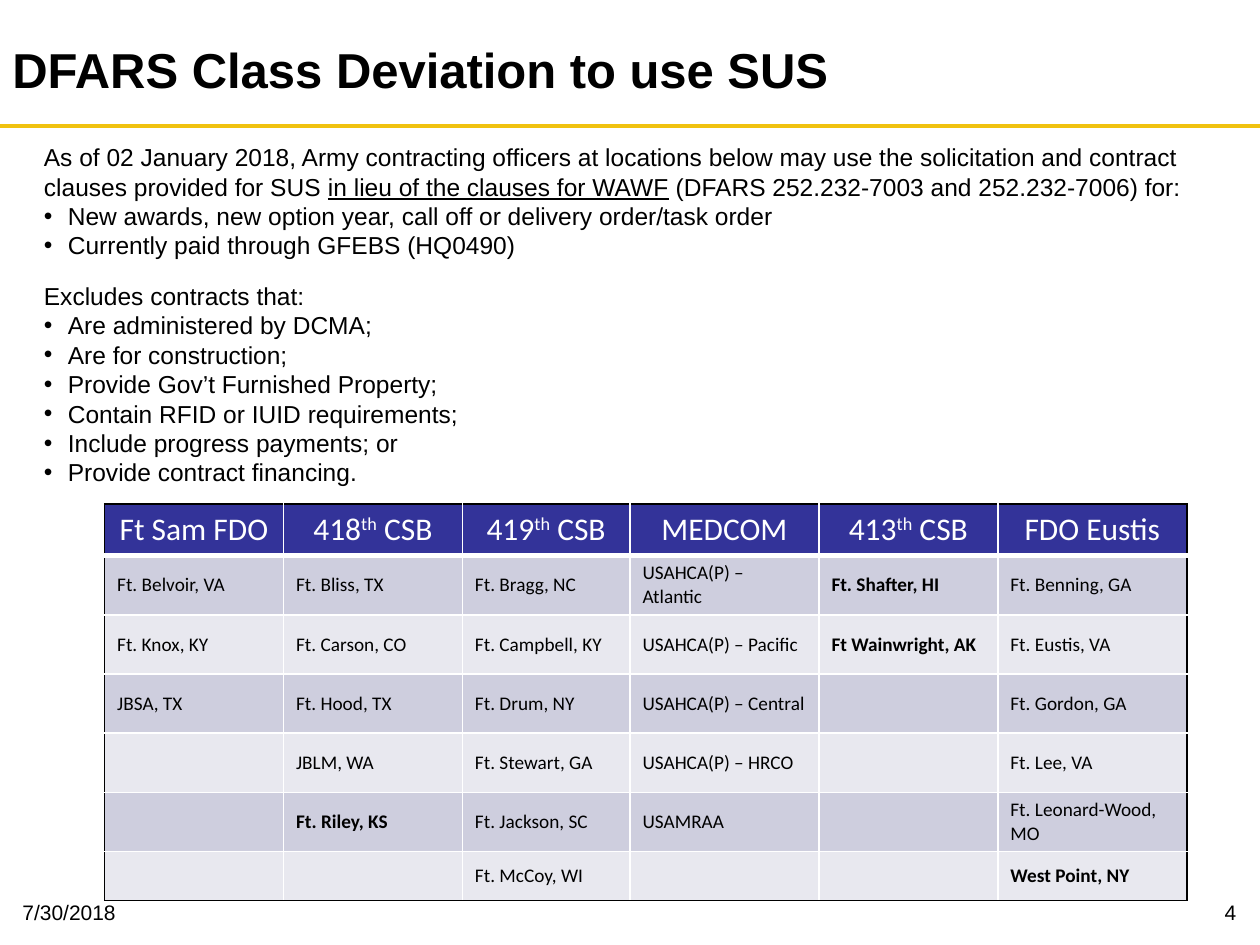
from dataclasses import dataclass

from lxml.etree import SubElement
from pptx import Presentation
from pptx.dml.color import RGBColor
from pptx.enum.shapes import MSO_CONNECTOR
from pptx.enum.text import MSO_ANCHOR, PP_ALIGN
from pptx.oxml.ns import qn
from pptx.util import Inches, Pt


@dataclass(frozen=True)
class Theme:
    ink: str = "000000"
    paper: str = "FFFFFF"
    gold: str = "F0C210"
    navy: str = "333399"
    bands: tuple = ("CECEDE", "E8E8EF")
    sans: str = "Arial"
    grid: str = "Calibri"
    title: float = 28
    head: float = 18
    body: float = 14
    foot: float = 12
    cell: float = 11
    pitch: float = 16.8
    gap: float = 12


INTRO = [
    "As of 02 January 2018, Army contracting officers at locations below may use "
    "the solicitation and contract clauses provided for SUS ^in lieu of the clauses "
    "for WAWF^ (DFARS 252.232-7003 and 252.232-7006) for:",
    "• New awards, new option year, call off or delivery order/task order",
    "• Currently paid through GFEBS (HQ0490)",
    "Excludes contracts that:",
    "• Are administered by DCMA;",
    "• Are for construction;",
    "• Provide Gov’t Furnished Property;",
    "• Contain RFID or IUID requirements;",
    "• Include progress payments; or",
    "• Provide contract financing.",
]
SITES = [
    ["Ft Sam FDO", "418^th^ CSB", "419^th^ CSB", "MEDCOM", "413^th^ CSB", "FDO Eustis"],
    ["Ft. Belvoir, VA", "Ft. Bliss, TX", "Ft. Bragg, NC", "USAHCA(P) – Atlantic",
     "*Ft. Shafter, HI", "Ft. Benning, GA"],
    ["Ft. Knox, KY", "Ft. Carson, CO", "Ft. Campbell, KY", "USAHCA(P) – Pacific",
     "*Ft Wainwright, AK", "Ft. Eustis, VA"],
    ["JBSA, TX", "Ft. Hood, TX", "Ft. Drum, NY", "USAHCA(P) – Central", "",
     "Ft. Gordon, GA"],
    ["", "JBLM, WA", "Ft. Stewart, GA", "USAHCA(P) – HRCO", "", "Ft. Lee, VA"],
    ["", "*Ft. Riley, KS", "Ft. Jackson, SC", "USAMRAA", "", "Ft. Leonard-Wood, MO"],
    ["", "", "Ft. McCoy, WI", "", "", "*West Point, NY"],
]
WIDTHS = [1.42, 1.42, 1.33, 1.5, 1.42, 1.5]
HEIGHTS = [0.41] + [0.47] * 5 + [0.39]


def lift(run):
    run._r.get_or_add_rPr().set("baseline", "30000")


def under(run):
    run.font.underline = True


class Deck:
    """Draws styled elements on the current slide."""

    def __init__(self, theme):
        self.theme = theme
        self.file = Presentation()
        self.file.slide_width, self.file.slide_height = Inches(10), Inches(7.5)
        self.slide = self.file.slides.add_slide(self.file.slide_layouts[6])

    def rule(self, y):
        line = self.slide.shapes.add_connector(
            MSO_CONNECTOR.STRAIGHT, 0, Inches(y), Inches(10), Inches(y))
        line.line.color.rgb = RGBColor.from_string(self.theme.gold)
        line.line.width = Pt(2.5)
        SubElement(line._element.spPr, qn("a:effectLst"))

    def font(self, para, size, name, color, bold=False):
        para.font.size, para.font.name, para.font.bold = Pt(size), name, bold
        para.font.color.rgb = RGBColor.from_string(color)

    def runs(self, para, text, mark):
        for i, part in enumerate(text.split("^")):
            if part:
                run = para.add_run()
                run.text = part
                if i % 2:
                    mark(run)

    def text(self, box, words, size, bold=False, align=PP_ALIGN.LEFT):
        frame = self.slide.shapes.add_textbox(*map(Inches, box)).text_frame
        frame.word_wrap = True
        para = frame.paragraphs[0]
        para.alignment = align
        self.runs(para, words, under)
        self.font(para, size, self.theme.sans, self.theme.ink, bold)
        return frame

    def title(self, words):
        frame = self.text((0, 0.17, 7.33, 0.75), words, self.theme.title, True)
        frame.vertical_anchor = MSO_ANCHOR.MIDDLE

    def footer(self, left, words, align):
        frame = self.text((left, 6.9, 2.33, 0.52), words, self.theme.foot, align=align)
        frame.margin_top = Inches(0.24)

    def body(self, box, lines):
        frame = self.text(box, lines[0], self.theme.body)
        frame.paragraphs[0].line_spacing = Pt(self.theme.pitch)
        for words in lines[1:]:
            para = frame.add_paragraph()
            para.line_spacing = Pt(self.theme.pitch)
            if words.startswith("• "):
                props = para._p.get_or_add_pPr()
                props.set("marL", str(Inches(0.19)))
                props.set("indent", str(-Inches(0.19)))
                SubElement(props, qn("a:buFont")).set("typeface", self.theme.sans)
                SubElement(props, qn("a:buChar")).set("char", "•")
            else:
                para.space_before = Pt(self.theme.gap)
            self.runs(para, words.removeprefix("• "), under)
            self.font(para, self.theme.body, self.theme.sans, self.theme.ink)

    def border(self, cell, side, color, width):
        line = SubElement(cell._tc.get_or_add_tcPr(), qn(f"a:ln{side}"), w=str(Pt(width)))
        fill = SubElement(line, qn("a:solidFill"))
        SubElement(fill, qn("a:srgbClr"), val=color)

    def cell(self, cell, words, head, fill):
        look = self.theme
        cell.margin_top = cell.margin_bottom = Inches(0.05 if head else 0.04)
        cell.vertical_anchor = MSO_ANCHOR.TOP if head else MSO_ANCHOR.MIDDLE
        para = cell.text_frame.paragraphs[0]
        para.alignment = PP_ALIGN.CENTER if head else PP_ALIGN.LEFT
        self.runs(para, words.removeprefix("*"), lift)
        self.font(para, look.head if head else look.cell, look.grid,
                  look.paper if head else look.ink, words.startswith("*"))
        cell.fill.solid()
        cell.fill.fore_color.rgb = RGBColor.from_string(fill)

    def table(self, left, top, rows, widths, heights):
        look = self.theme
        table = self.slide.shapes.add_table(
            len(rows), len(widths), Inches(left), Inches(top),
            Inches(sum(widths)), Inches(sum(heights))).table
        table.first_row = table.horz_banding = False
        for col, width in zip(table.columns, widths):
            col.width = Inches(width)
        for row, height in zip(table.rows, heights):
            row.height = Inches(height)
        for r, row in enumerate(rows):
            fill = look.bands[(r - 1) % 2] if r else look.navy
            for c, words in enumerate(row):
                cell = table.cell(r, c)
                edges = {"L": c == 0, "R": c == len(widths) - 1,
                         "T": r == 0, "B": r == len(rows) - 1}
                for side, outer in edges.items():
                    width = 3 if r == 0 and side == "B" else 1
                    self.border(cell, side, look.ink if outer else look.paper, width)
                self.cell(cell, words, r == 0, fill)


def main():
    deck = Deck(Theme())
    deck.rule(1)
    deck.title("DFARS Class Deviation to use SUS")
    deck.footer(7.58, "4", PP_ALIGN.RIGHT)
    deck.body((0.25, 1.08, 9.25, 3.16), INTRO)
    deck.footer(0.08, "7/30/2018", PP_ALIGN.LEFT)
    deck.table(0.83, 4, SITES, WIDTHS, HEIGHTS)
    deck.file.save("out.pptx")


if __name__ == "__main__":
    main()
